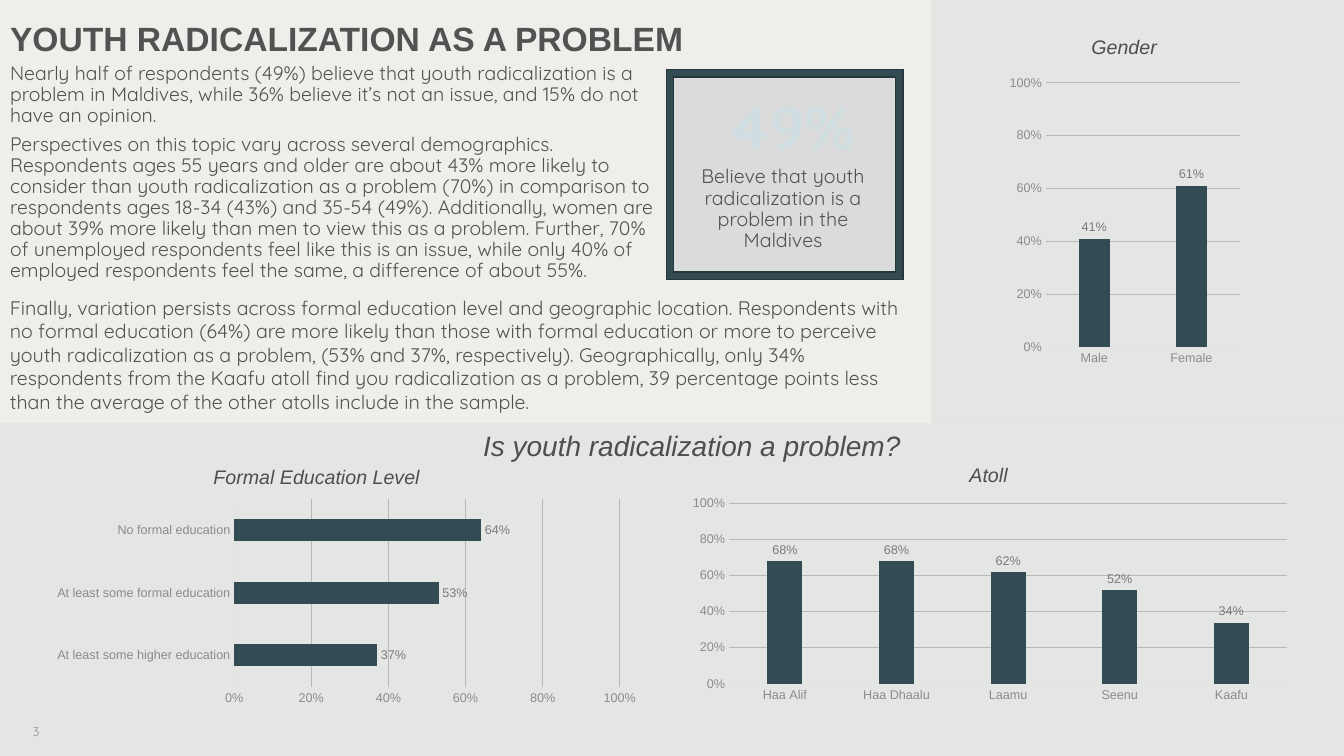
import lxml.etree
import pptx
import pptx.chart.data
import pptx.dml.color
import pptx.enum.chart
import pptx.enum.shapes
import pptx.enum.text
import pptx.oxml.ns
import pptx.util

Cm = pptx.util.Cm
Pt = pptx.util.Pt
RGBColor = pptx.dml.color.RGBColor
SHAPE = pptx.enum.shapes.MSO_SHAPE
CHART = pptx.enum.chart.XL_CHART_TYPE
ALIGN = pptx.enum.text.PP_ALIGN
ANCHOR = pptx.enum.text.MSO_ANCHOR
AUTO_SIZE = pptx.enum.text.MSO_AUTO_SIZE
qn = pptx.oxml.ns.qn

PAPER = RGBColor(0xEE, 0xEE, 0xEA)
NAVY = RGBColor(0x00, 0x28, 0x68)
TEAL = RGBColor(0x33, 0x4C, 0x53)
TEAL_DARK = RGBColor(0x26, 0x38, 0x3D)
TEAL_PALE = RGBColor(0xD0, 0xDE, 0xE2)
CARD = RGBColor(0xDB, 0xDB, 0xDC)
BODY = RGBColor(0x52, 0x52, 0x52)
HEADING = RGBColor(0x4E, 0x4E, 0x50)
NUMBER = RGBColor(0x91, 0x91, 0x91)
AXIS_TEXT = RGBColor(0x8B, 0x8B, 0x8E)
AXIS_LINE = RGBColor(0xE4, 0xE4, 0xE5)
GRID = RGBColor(0xB8, 0xB8, 0xB9)
LABEL = RGBColor(0x79, 0x79, 0x7D)


def add_run(p, text, size, color, font="Quicksand", bold=False, italic=False):
    r = p.add_run()
    r.text = text
    r.font.name = font
    r.font.size = Pt(size)
    r.font.color.rgb = color
    r.font.bold = bold
    r.font.italic = italic


def add_box(shapes, x, y, w, h, wrap=True, align=ALIGN.LEFT):
    tf = shapes.add_textbox(Cm(x), Cm(y), Cm(w), Cm(h)).text_frame
    tf.word_wrap = wrap
    tf.paragraphs[0].alignment = align
    return tf


prs = pptx.Presentation()
prs.slide_width = Cm(33.87)
prs.slide_height = Cm(19.05)
s = prs.slides.add_slide(prs.slide_layouts[1])
s.background.fill.solid()
s.background.fill.fore_color.rgb = PAPER

for x, y, w, h in [(23.47, 0, 10.4, 10.67), (0, 10.67, 33.87, 8.38)]:
    sp = s.shapes.add_shape(SHAPE.RECTANGLE, Cm(x), Cm(y), Cm(w), Cm(h))
    sp.shadow.inherit = False
    sp.line.fill.background()
    sp.fill.solid()
    sp.fill.fore_color.rgb = NAVY
    color = sp.fill._xPr.find(".//" + qn("a:srgbClr"))
    lxml.etree.SubElement(color, qn("a:alpha"), val="4000")

title = s.shapes.title
title.left, title.top, title.width, title.height = Cm(0), Cm(0.03), Cm(18.52), Cm(2.01)
tf = title.text_frame
tf.auto_size = AUTO_SIZE.NONE
tf.vertical_anchor = ANCHOR.MIDDLE
p = tf.paragraphs[0]
p.alignment = ALIGN.LEFT
p.line_spacing = 0.9
add_run(p, "YOUTH RADICALIZATION AS A PROBLEM", 24, BODY, "Arial", bold=True)

body = s.placeholders[1]
body.left, body.top, body.width, body.height = Cm(0), Cm(1.47), Cm(16.87), Cm(5.94)
tf = body.text_frame
tf.auto_size = AUTO_SIZE.NONE
findings = [
    "Nearly half of respondents (49%) believe that youth radicalization is a problem in Maldives, "
    "while 36% believe it’s not an issue, and 15% do not have an opinion.",
    "Perspectives on this topic vary across several demographics. Respondents ages 55 years and older "
    "are about 43% more likely to consider than youth radicalization as a problem (70%) in comparison "
    "to respondents ages 18-34 (43%) and 35-54 (49%). Additionally, women are about 39% more likely "
    "than men to view this as a problem. Further, 70% of unemployed respondents feel like this is an "
    "issue, while only 40% of employed respondents feel the same, a difference of about 55%.",
]
for i, text in enumerate(findings):
    p = tf.add_paragraph() if i else tf.paragraphs[0]
    pPr = p._p.get_or_add_pPr()
    pPr.set("marL", "0")
    pPr.set("indent", "0")
    lxml.etree.SubElement(pPr, qn("a:buNone"))
    p.line_spacing = 0.9
    p.space_before = Pt(6 * i)
    add_run(p, text, 13.9, BODY)

tf = add_box(s.shapes, 0, 7.32, 23.47, 3.35)
add_run(
    tf.paragraphs[0],
    "Finally, variation persists across formal education level and geographic location. Respondents "
    "with no formal education (64%) are more likely than those with formal education or more to "
    "perceive youth radicalization as a problem, (53% and 37%, respectively). Geographically, only 34% "
    "respondents from the Kaafu atoll find you radicalization as a problem, 39 percentage points less "
    "than the average of the other atolls include in the sample.",
    14, BODY,
)

tf = add_box(s.shapes, 0.58, 18.11, 1.4, 0.91)
add_run(tf.paragraphs[0], "3", 9, NUMBER)

callout = s.shapes.add_group_shape().shapes
for kind, fill in [(SHAPE.RECTANGLE, CARD), (SHAPE.FRAME, TEAL)]:
    sp = callout.add_shape(kind, Cm(16.79), Cm(1.75), Cm(5.97), Cm(5.3))
    sp.shadow.inherit = False
    sp.fill.solid()
    sp.fill.fore_color.rgb = fill
    sp.line.color.rgb = TEAL_DARK
    sp.line.width = Pt(1)
sp.adjustments[0] = 0.036

tf = add_box(callout, 17.91, 2.11, 4.04, 2.13, align=ALIGN.CENTER)
add_run(tf.paragraphs[0], "49%", 44, TEAL_PALE, bold=True)
tf = add_box(callout, 17.25, 3.96, 5.08, 2.08, align=ALIGN.CENTER)
tf.margin_left, tf.margin_top, tf.margin_right, tf.margin_bottom = Cm(0.25), Cm(0.25), Cm(0.36), Cm(0.41)
tf.paragraphs[0].line_spacing = 0.9
add_run(tf.paragraphs[0], "Believe that youth radicalization is a problem in the Maldives", 14, BODY)

headings = [
    ("Is youth radicalization a problem?", 20, 11.79, 10.67, 11.3, 1.12),
    ("Formal Education Level", 14, 5.11, 11.58, 5.74, 0.86),
    ("Atoll", 14, 24.18, 11.53, 1.47, 0.86),
    ("Gender", 14, 27.25, 0.76, 2.16, 0.86),
]
for text, size, x, y, w, h in headings:
    tf = add_box(s.shapes, x, y, w, h, wrap=False, align=ALIGN.CENTER)
    add_run(tf.paragraphs[0], text, size, HEADING, "Arial", italic=True)

charts = [
    (CHART.COLUMN_CLUSTERED, 17.15, 12.4, 15.6, 5.41, 219, -27,
     {"Haa Alif": 0.68, "Haa Dhaalu": 0.68, "Laamu": 0.62, "Seenu": 0.52, "Kaafu": 0.34}),
    (CHART.BAR_CLUSTERED, 1.14, 12.47, 15.19, 5.41, 182, 0,
     {"At least some higher education": 0.37, "At least some formal education": 0.53,
      "No formal education": 0.64}),
    (CHART.COLUMN_CLUSTERED, 25.32, 1.75, 6.05, 7.62, 219, -27, {"Male": 0.41, "Female": 0.61}),
]
for kind, x, y, w, h, gap, overlap, shares in charts:
    data = pptx.chart.data.CategoryChartData(number_format="0%")
    data.categories = list(shares)
    data.add_series("Series 1", list(shares.values()))
    chart = s.shapes.add_chart(kind, Cm(x), Cm(y), Cm(w), Cm(h), data).chart
    chart.has_title = False
    chart.has_legend = False
    chart.font.name = "Arial"
    chart.font.size = Pt(10)
    chart.font.color.rgb = HEADING

    plot = chart.plots[0]
    plot.vary_by_categories = False
    plot.gap_width = gap
    plot.overlap = overlap
    fill = plot.series[0].format.fill
    fill.solid()
    fill.fore_color.rgb = TEAL
    plot.has_data_labels = True
    labels = plot.data_labels
    labels.show_value = True
    labels.position = pptx.enum.chart.XL_LABEL_POSITION.OUTSIDE_END

    cat, val = chart.category_axis, chart.value_axis
    for item, color in [(labels, LABEL), (cat.tick_labels, AXIS_TEXT), (val.tick_labels, AXIS_TEXT)]:
        item.font.name = "Arial"
        item.font.size = Pt(9)
        item.font.color.rgb = color
    for item in (labels, val.tick_labels):
        item.number_format = "0%"
        item.number_format_is_linked = False
    for axis in (cat, val):
        axis.major_tick_mark = pptx.enum.chart.XL_TICK_MARK.NONE
        axis.minor_tick_mark = pptx.enum.chart.XL_TICK_MARK.NONE
    cat.format.line.color.rgb = AXIS_LINE
    cat.format.line.width = Pt(0.75)
    val.format.line.fill.background()
    val.minimum_scale = 0
    val.maximum_scale = 1
    val.major_unit = 0.2
    val.has_major_gridlines = True
    val.major_gridlines.format.line.color.rgb = GRID
    val.major_gridlines.format.line.width = Pt(0.75)

prs.save("out.pptx")
